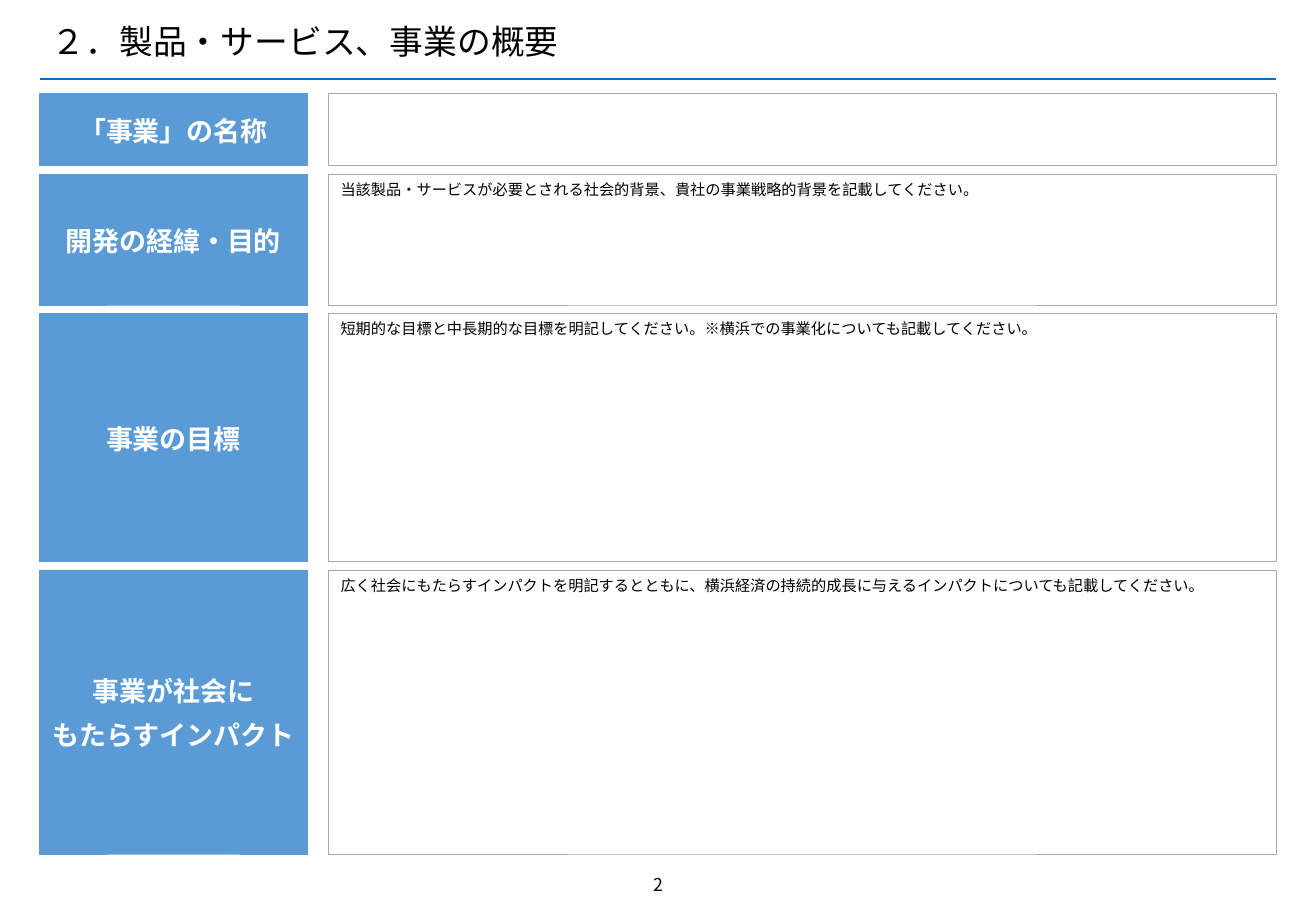
"""Build the product, service and business overview slide."""
from dataclasses import dataclass
from typing import Any

from lxml import etree
from pptx import Presentation
from pptx import util as u
from pptx.dml.color import RGBColor
from pptx.enum import shapes, text
from pptx.oxml import ns

COLORS = {
    "rule": "0070C0",
    "label": "5B9BD5",
    "border": "A7A8AA",
    "white": "FFFFFF",
    "black": "000000",
}
FONT = "Noto Sans CJK JP"
LEFT, LABEL_WIDTH = 0.83, 5.59
FIELD_LEFT, FIELD_WIDTH = 6.87, 19.81
FIRST_TOP, ROW_GAP = 1.96, 0.18


@dataclass(frozen=True)
class Area:
    left: float
    top: float
    width: float
    height: float

    def lengths(self) -> list[u.Cm]:
        return [u.Cm(n) for n in (self.left, self.top, self.width, self.height)]


@dataclass(frozen=True)
class Style:
    size: float
    color: str = "black"
    bold: bool = False
    align: text.PP_ALIGN = text.PP_ALIGN.LEFT
    spacing: float = 1.0


@dataclass(frozen=True)
class Row:
    height: float
    label: tuple[str, ...]
    note: str = ""


TITLE = Style(20, spacing=0.9)
LABEL = Style(16, "white", True, text.PP_ALIGN.CENTER, 1.06)
NOTE = Style(9)
NUMBER = Style(10.5, align=text.PP_ALIGN.CENTER)

ROWS = [
    Row(1.5, ("「事業」の名称",)),
    Row(2.74, ("開発の経緯・目的",),
        "当該製品・サービスが必要とされる社会的背景、貴社の事業戦略的背景を記載してください。"),
    Row(5.18, ("事業の目標",),
        "短期的な目標と中長期的な目標を明記してください。※横浜での事業化についても記載してください。"),
    Row(5.94, ("事業が社会に", "もたらすインパクト"),
        "広く社会にもたらすインパクトを明記するとともに、"
        "横浜経済の持続的成長に与えるインパクトについても記載してください。"),
]


def rgb(name: str) -> RGBColor:
    return RGBColor.from_string(COLORS[name])


def write(frame: Any, lines: tuple[str, ...], style: Style) -> None:
    frame.word_wrap = True
    for index, line in enumerate(lines):
        para = frame.add_paragraph() if index else frame.paragraphs[0]
        para.alignment = style.align
        para.line_spacing = style.spacing
        if index:
            para.space_before = u.Pt(6)
        span = para.add_run()
        span.text = line
        span.font.size = u.Pt(style.size)
        span.font.bold = style.bold
        span.font.color.rgb = rgb(style.color)
        span.font.name = FONT
        east_asian = etree.SubElement(span.font._element, ns.qn("a:ea"))
        east_asian.set("typeface", FONT)


def add_text(page: Any, area: Area, line: str, style: Style) -> Any:
    box = page.shapes.add_textbox(*area.lengths())
    write(box.text_frame, (line,), style)
    return box


def add_panel(page: Any, area: Area, fill: str, border: str) -> Any:
    panel = page.shapes.add_shape(shapes.MSO_SHAPE.RECTANGLE, *area.lengths())
    panel.shadow.inherit = False
    panel.fill.solid()
    panel.fill.fore_color.rgb = rgb(fill)
    panel.line.color.rgb = rgb(border)
    panel.line.width = u.Pt(0.5)
    return panel


def add_row(page: Any, row: Row, top: float) -> None:
    label = add_panel(page, Area(LEFT, top, LABEL_WIDTH, row.height), "label", "label")
    frame = label.text_frame
    frame.vertical_anchor = text.MSO_ANCHOR.MIDDLE
    frame.margin_left = frame.margin_right = u.Cm(0.2)
    frame.margin_top = frame.margin_bottom = u.Cm(0.2)
    write(frame, row.label, LABEL)
    add_panel(page, Area(FIELD_LEFT, top, FIELD_WIDTH, row.height), "white", "border")
    if row.note:
        note = add_text(page, Area(FIELD_LEFT, top, FIELD_WIDTH, 0.64), row.note, NOTE)
        note.text_frame.auto_size = text.MSO_AUTO_SIZE.SHAPE_TO_FIT_TEXT


def add_rule(page: Any, top: float) -> None:
    rule = page.shapes.add_connector(
        shapes.MSO_CONNECTOR.STRAIGHT,
        u.Cm(LEFT), u.Cm(top), u.Cm(FIELD_LEFT + FIELD_WIDTH), u.Cm(top),
    )
    rule.line.color.rgb = rgb("rule")
    rule.line.width = u.Pt(1)
    etree.SubElement(rule._element.spPr, ns.qn("a:effectLst"))


def main() -> None:
    deck = Presentation()
    deck.slide_width, deck.slide_height = u.Cm(27.51), u.Cm(19.05)
    page = deck.slides.add_slide(deck.slide_layouts[6])
    add_rule(page, 1.65)
    title = add_text(page, Area(LEFT, 0.38, 23.72, 1.07),
                     "２．製品・サービス、事業の概要", TITLE)
    title.text_frame.vertical_anchor = text.MSO_ANCHOR.MIDDLE
    top = FIRST_TOP
    for row in ROWS:
        add_row(page, row, top)
        top += row.height + ROW_GAP
    number = add_text(page, Area(12.67, 18.14, 2.18, 0.74), "2", NUMBER)
    number.text_frame.auto_size = text.MSO_AUTO_SIZE.SHAPE_TO_FIT_TEXT
    deck.save("out.pptx")


if __name__ == "__main__":
    main()
